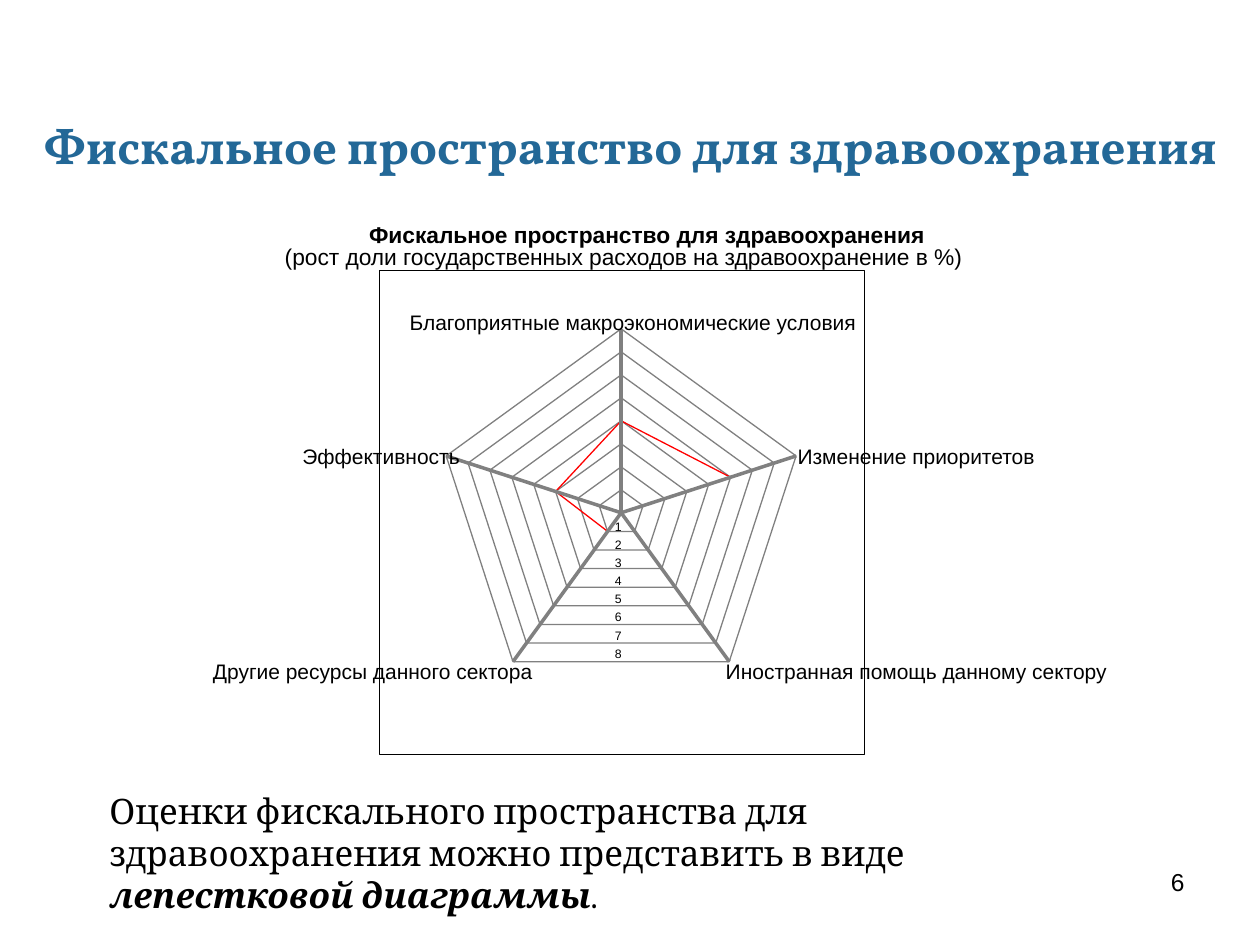
from math import cos, pi, sin

from lxml.etree import SubElement
from pptx import Presentation
from pptx.dml.color import RGBColor
from pptx.enum.shapes import MSO_CONNECTOR, MSO_SHAPE
from pptx.enum.text import MSO_ANCHOR, PP_ALIGN
from pptx.oxml.ns import qn
from pptx.util import Inches, Pt

THEME = {
    "title": ("Vollkorn", 28, "236897"),
    "body": ("Cambria", 20, "000000"),
    "number": ("Arial", 14, "000000"),
    "heading": ("Arial", 13, "000000"),
    "label": ("Arial", 12, "000000"),
    "scale": ("Arial", 7, "000000"),
    "frame": "000000",
    "grid": "808080",
    "series": "FF0000",
    "paper": "FFFFFF",
}

deck = Presentation()
deck.slide_width, deck.slide_height = Inches(10), Inches(7.5)
slide = deck.slides.add_slide(deck.slide_layouts[5])


def write(shape, style, *texts, align=PP_ALIGN.LEFT):
    """Put the texts in one paragraph, one run each, and return the runs."""
    para = shape.text_frame.paragraphs[0]
    para.alignment = align
    name, size, color = THEME[style]
    for text in texts:
        span = para.add_run()
        span.text = text
        span.font.name, span.font.size = name, Pt(size)
        span.font.bold = False
        span.font.color.rgb = RGBColor.from_string(color)
    return para.runs


def outline(shape, color, fill=None):
    """Give a shape a hairline, and a fill if one is named."""
    shape.shadow.inherit = False
    shape.line.color.rgb = RGBColor.from_string(THEME[color])
    shape.line.width = Pt(0)
    if fill:
        shape.fill.solid()
        shape.fill.fore_color.rgb = RGBColor.from_string(THEME[fill])
    else:
        shape.fill.background()


# Title
title = slide.shapes.title
title.left, title.top = 0, Inches(0.68)
title.width, title.height = deck.slide_width, Inches(0.94)
title.text_frame.vertical_anchor = MSO_ANCHOR.MIDDLE
write(title, "title", "Фискальное пространство для здравоохранения",
      align=PP_ALIGN.CENTER)[0].font.bold = True

# Explanation below the radar
body = slide.shapes.add_textbox(Inches(0.77), Inches(6.22), Inches(8.18), Inches(0.77))
body.text_frame.word_wrap = True
term = write(body, "body",
             "Оценки фискального пространства для здравоохранения можно представить в виде ",
             "лепестковой диаграммы", ".")[1]
term.font.bold = term.font.italic = True

# Slide number
number = slide.shapes.add_textbox(Inches(7.17), Inches(6.83), Inches(2.33), Inches(0.52))
number.text_frame.word_wrap = True
write(number, "number", "6", align=PP_ALIGN.RIGHT)

# Radar background and frame
radar = slide.shapes.add_group_shape().shapes
for area, color, fill in (((1.79, 1.59, 6.28, 4.56), "paper", "paper"),
                          ((3.01, 2.15, 3.85, 3.84), "frame", None)):
    outline(radar.add_shape(MSO_SHAPE.RECTANGLE, *map(Inches, area)), color, fill)

# Grid rings and the data series, as values on the five axes
AXES, LEVELS = 5, 8
CENTER_X, CENTER_Y, RADIUS = 4.93, 4.07, 1.46
SCORES = [4, 5, 0, 1, 3]


def on_axis(axis, value):
    """Place a value on an axis, clockwise from the top."""
    angle, reach = 2 * pi * axis / AXES, RADIUS * value / LEVELS
    return Inches(CENTER_X + reach * sin(angle)), Inches(CENTER_Y - reach * cos(angle))


rings = [([level] * AXES, "grid") for level in range(1, LEVELS + 1)]
for values, color in rings + [(SCORES, "series")]:
    points = [on_axis(axis, value) for axis, value in enumerate(values)]
    builder = radar.build_freeform(*points[0])
    builder.add_line_segments(points[1:], close=True)
    outline(builder.convert_to_shape(), color)

# Axes
for axis in range(AXES):
    spoke = radar.add_connector(MSO_CONNECTOR.STRAIGHT,
                                *on_axis(axis, LEVELS), *on_axis(axis, 0))
    spoke.line.color.rgb = RGBColor.from_string(THEME["grid"])
    spoke.line.width = Pt(0)
    SubElement(spoke.element.spPr, qn("a:effectLst"))

# Headings, axis names and scale numbers
labels = [
    ("Благоприятные макроэкономические условия", "label", 3.25, 2.46, 3.58, 0.2),
    ("Изменение приоритетов", "label", 6.33, 3.52, 1.9, 0.2),
    ("Иностранная помощь данному сектору", "label", 5.76, 5.23, 3.05, 0.2),
    ("Другие ресурсы данного сектора", "label", 1.69, 5.23, 2.56, 0.2),
    ("Эффективность", "label", 2.4, 3.52, 1.26, 0.2),
    ("Фискальное пространство для здравоохранения", "heading", 2.93, 1.75, 4.47, 0.22),
    ("(рост доли государственных расходов на здравоохранение в %)", "heading",
     2.26, 1.93, 5.45, 0.22),
]
SCALE_STEP = 0.144
labels += [(str(level), "scale", 4.88, 3.975 + level * SCALE_STEP, 0.1, 0.14)
           for level in range(1, LEVELS + 1)]
for text, style, *area in labels:
    box = radar.add_textbox(*map(Inches, area))
    frame = box.text_frame
    frame.word_wrap = False
    frame.margin_left = frame.margin_right = frame.margin_top = frame.margin_bottom = 0
    span = write(box, style, text)[0]
    span.font.bold = style == "heading" and not text.startswith("(")

deck.save("out.pptx")
